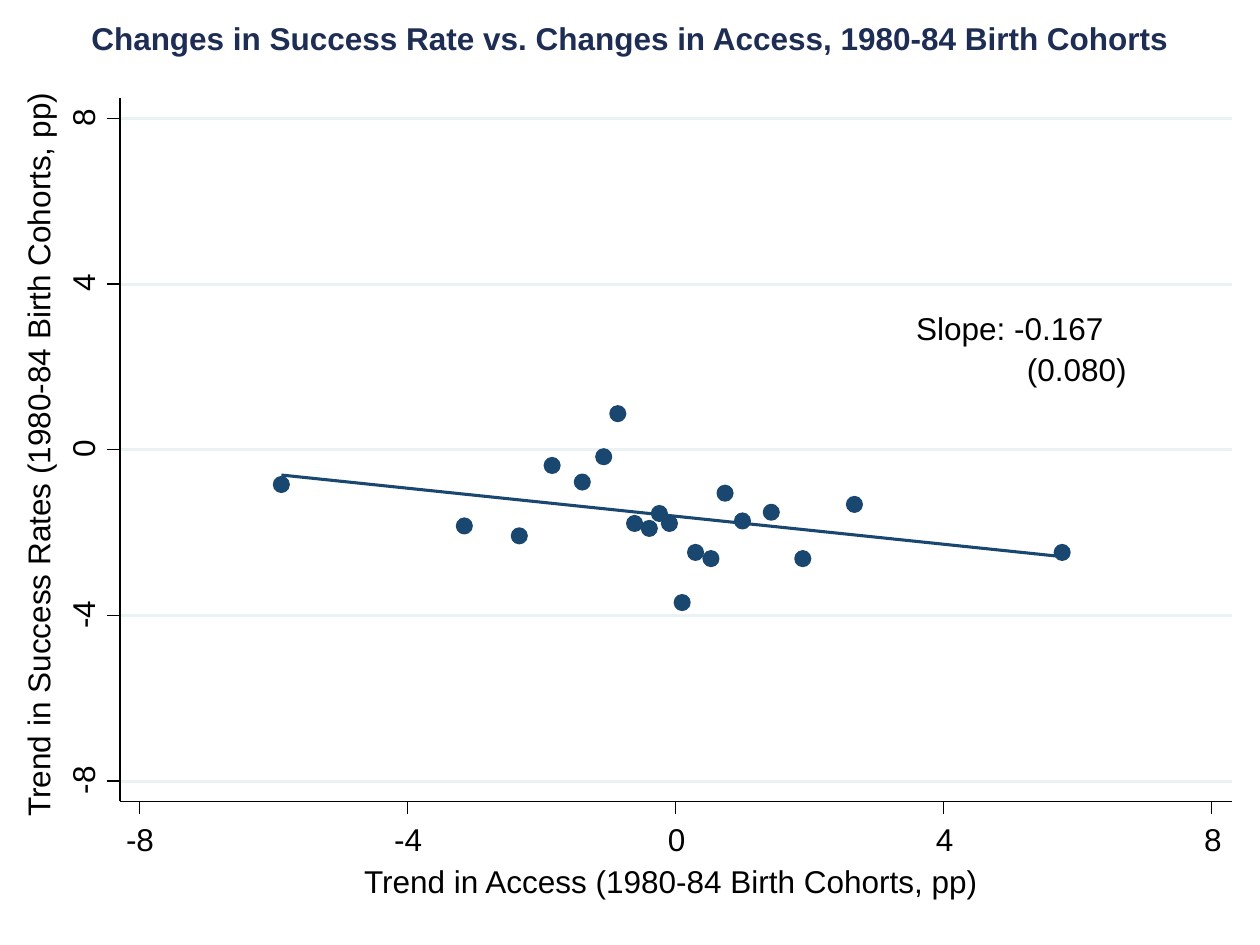
from lxml import etree
from pptx import Presentation
from pptx import util as u
from pptx.dml.color import RGBColor
from pptx.enum import shapes, text
from pptx.oxml import ns

WHITE = RGBColor(0xFF, 0xFF, 0xFF)
BLACK = RGBColor(0, 0, 0)
NAVY = RGBColor(0x1E, 0x2D, 0x53)
BLUE = RGBColor(0x1A, 0x47, 0x6F)
GRID = RGBColor(0xEA, 0xF2, 0xF3)

THIN, THICK = 0.88, 1.75
LEFT, TOP, RIGHT, BOTTOM = 68.5, 56.2, 704, 457.9
ORIGIN_X, ORIGIN_Y = 386, 257
UNIT_X, UNIT_Y = 38.3, 23.67
TICK = 7.2
DOT = 8
TICKS = range(-8, 9, 4)

POINTS = [
    (-5.88, -0.84), (-3.15, -1.84), (-2.33, -2.08), (-1.84, -0.38),
    (-1.39, -0.78), (-1.07, -0.17), (-0.86, 0.87), (-0.61, -1.78),
    (-0.39, -1.9), (-0.24, -1.54), (-0.09, -1.78), (0.1, -3.69),
    (0.3, -2.48), (0.53, -2.63), (0.74, -1.05), (1.0, -1.72),
    (1.43, -1.51), (1.9, -2.63), (2.67, -1.32), (5.77, -2.48),
]
FIT = [(-5.88, -0.61), (5.77, -2.58)]


def to_x(value):
    return ORIGIN_X + UNIT_X * value


def to_y(value):
    return ORIGIN_Y - UNIT_Y * value


class Plot:
    font = "Arial"
    size = 18

    def __init__(self, slide):
        self.s = slide

    def stroke(self, sp, color, width):
        sp.line.color.rgb = color
        sp.line.width = u.Pt(width)

    def shape(self, kind, x, y, w, h, color, width):
        sp = self.s.shapes.add_shape(kind, u.Pt(x), u.Pt(y), u.Pt(w), u.Pt(h))
        sp.shadow.inherit = False
        sp.fill.solid()
        sp.fill.fore_color.rgb = color
        self.stroke(sp, color, width)

    def panel(self, x, y, w, h):
        self.shape(shapes.MSO_SHAPE.RECTANGLE, x, y, w, h, WHITE, THIN)

    def dot(self, x, y):
        self.shape(shapes.MSO_SHAPE.OVAL, x - DOT / 2, y - DOT / 2, DOT, DOT, BLUE, THICK)

    def line(self, x1, y1, x2, y2, color=BLACK, width=THIN):
        sp = self.s.shapes.add_connector(
            shapes.MSO_CONNECTOR.STRAIGHT, u.Pt(x1), u.Pt(y1), u.Pt(x2), u.Pt(y2))
        self.stroke(sp, color, width)
        etree.SubElement(sp._element.spPr, ns.qn("a:effectLst"))

    def curve(self, points):
        start, *rest = [(u.Pt(x), u.Pt(y)) for x, y in points]
        builder = self.s.shapes.build_freeform(*start)
        builder.add_line_segments(rest, close=False)
        sp = builder.convert_to_shape()
        sp.shadow.inherit = False
        sp.fill.background()
        self.stroke(sp, BLUE, THICK)

    def textbox(self, words, x, y, w, h, color):
        sp = self.s.shapes.add_textbox(u.Pt(x), u.Pt(y), u.Pt(w), u.Pt(h))
        tf = sp.text_frame
        tf.auto_size = text.MSO_AUTO_SIZE.SHAPE_TO_FIT_TEXT
        p = tf.paragraphs[0]
        p.text = words
        p.font.name = self.font
        p.font.size = u.Pt(self.size)
        p.font.color.rgb = color
        return sp

    def label(self, words, cx, cy, w, rotation=0):
        h = 26
        sp = self.textbox(words, cx - w / 2, cy - h / 2, w, h, BLACK)
        sp.rotation = rotation
        tf = sp.text_frame
        tf.word_wrap = False
        tf.margin_left = tf.margin_top = tf.margin_right = tf.margin_bottom = 0

    def title(self, words):
        sp = self.textbox(words, 0, 7.2, 720, 29, NAVY)
        sp.text_frame.word_wrap = True
        p = sp.text_frame.paragraphs[0]
        p.alignment = text.PP_ALIGN.CENTER
        p.font.bold = True


def main():
    prs = Presentation()
    prs.slide_width, prs.slide_height = u.Pt(720), u.Pt(540)
    plot = Plot(prs.slides.add_slide(prs.slide_layouts[6]))

    plot.panel(0, 8.6, 719.3, 523.4)
    plot.panel(LEFT, TOP, RIGHT - LEFT, BOTTOM - TOP)
    for value in TICKS:
        plot.line(LEFT, to_y(value), RIGHT, to_y(value), GRID, THICK)

    for x, y in POINTS:
        plot.dot(to_x(x), to_y(y))
    plot.curve([(to_x(x), to_y(y)) for x, y in FIT])
    plot.label("Slope: -0.167", 584, 189.4, 121)
    plot.label("(0.080)", 621, 213.2, 68.4)

    plot.line(LEFT, BOTTOM, LEFT, TOP)
    plot.line(LEFT, BOTTOM, RIGHT, BOTTOM)
    for value in TICKS:
        x, y = to_x(value), to_y(value)
        w = 25.2 if value < 0 else 18.7
        plot.line(LEFT, y, LEFT - TICK, y)
        plot.label(str(value), 49.4, y - 5, w, 270)
        plot.line(x, BOTTOM, x, BOTTOM + TICK)
        plot.label(str(value), x + 5, 481.7, w)

    plot.label("Trend in Success Rates (1980-84 Birth Cohorts, pp)", 23.8, 243.4, 446.4, 270)
    plot.label("Trend in Access (1980-84 Birth Cohorts, pp)", 398.5, 505.4, 380.9)
    plot.title("Changes in Success Rate vs. Changes in Access, 1980-84 Birth Cohorts")

    prs.save("out.pptx")


if __name__ == "__main__":
    main()
